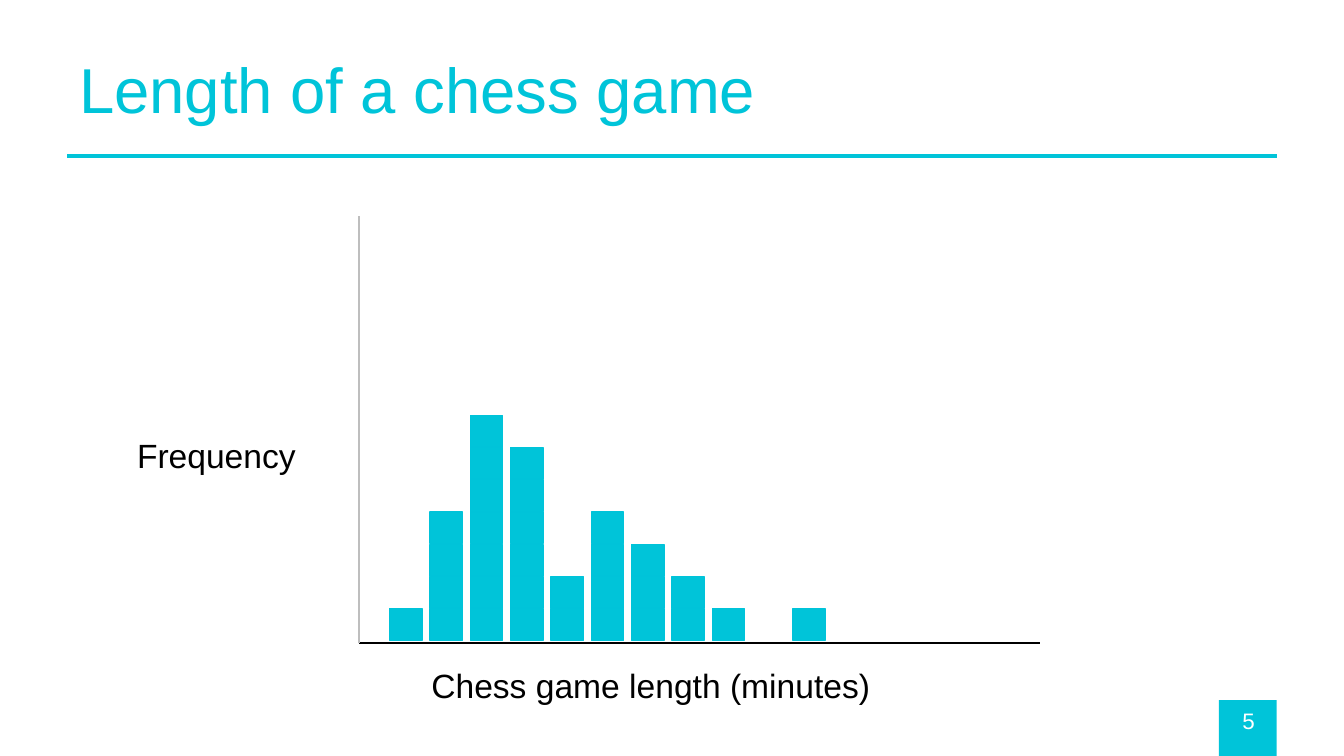
from pptx import Presentation
from pptx.dml.color import RGBColor
from pptx.enum.shapes import MSO_CONNECTOR, MSO_SHAPE
from pptx.enum.text import PP_ALIGN
from pptx.util import Pt
from lxml.etree import SubElement
from pptx.oxml.ns import qn

PX = 4572
HUE = {"teal": "00C4D9", "edge": "00C3D9", "black": "000000", "gray": "BEBEBE", "white": "FFFFFF"}

deck = Presentation()
deck.slide_width, deck.slide_height = 2000 * PX, 1125 * PX
slide = deck.slides.add_slide(deck.slide_layouts[6])
shapes = slide.shapes


def write(text, box, size=18, color="black", top=0, left=2, align=PP_ALIGN.LEFT):
    frame = shapes.add_textbox(*[n * PX for n in box]).text_frame
    frame.word_wrap = True
    frame.margin_left, frame.margin_top = left * PX, top * PX
    frame.margin_right = frame.margin_bottom = 0
    para = frame.paragraphs[0]
    para.alignment = align
    run = para.add_run()
    run.text = text
    run.font.name = "Arial"
    run.font.size = Pt(size)
    run.font.color.rgb = RGBColor.from_string(HUE[color])


def block(x, y, w, h, edge=None):
    shape = shapes.add_shape(MSO_SHAPE.RECTANGLE, x * PX, y * PX, w * PX, h * PX)
    shape.shadow.inherit = False
    shape.fill.solid()
    shape.fill.fore_color.rgb = RGBColor.from_string(HUE["teal"])
    if edge:
        shape.line.color.rgb = RGBColor.from_string(HUE[edge])
        shape.line.width = Pt(0.75)
    else:
        shape.line.fill.background()


block(1814, 1042, 86, 83)

counts = [1, 4, 7, 6, 2, 4, 3, 2, 1, 0, 1]
for col, count in enumerate(counts):
    for row in range(count):
        block(580 + 60 * col, 906 - 48 * row, 48, 47, edge="edge")

lines = [
    (1900, 232, 100, 232, "teal", 2),
    (534, 957, 1548, 957, "black", 1),
    (534, 957, 534, 321, "gray", 1),
]
for *ends, color, width in lines:
    line = shapes.add_connector(MSO_CONNECTOR.STRAIGHT, *[n * PX for n in ends])
    line.line.color.rgb = RGBColor.from_string(HUE[color])
    line.line.width = Pt(width)
    SubElement(line._element.spPr, qn("a:effectLst"))

write("Frequency", (202, 645, 242, 66), top=2)
write("Chess game length (minutes)", (640, 990, 660, 62))
write("5", (1830, 1052, 56, 42), size=12, color="white", left=0, align=PP_ALIGN.CENTER)
write("Length of a chess game", (116, 72, 1562, 118), size=34, color="teal", top=3)

deck.save("out.pptx")
